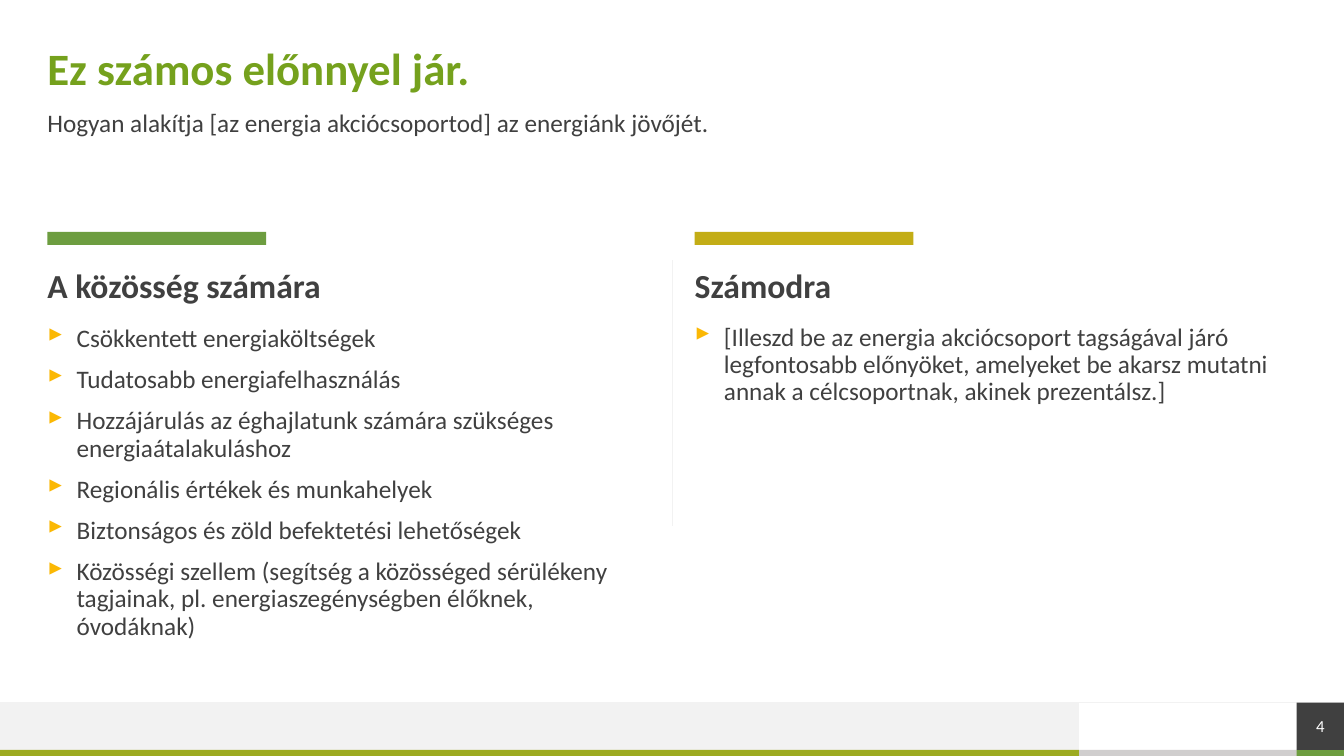
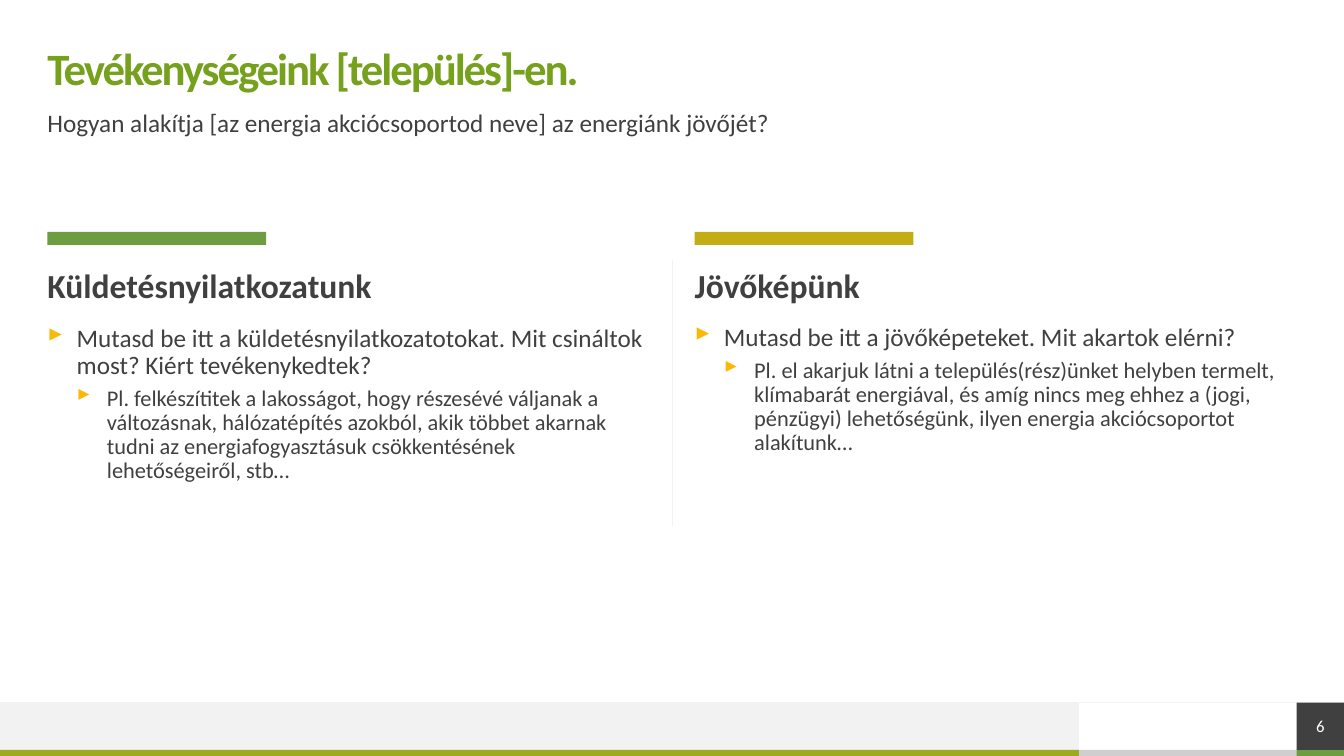
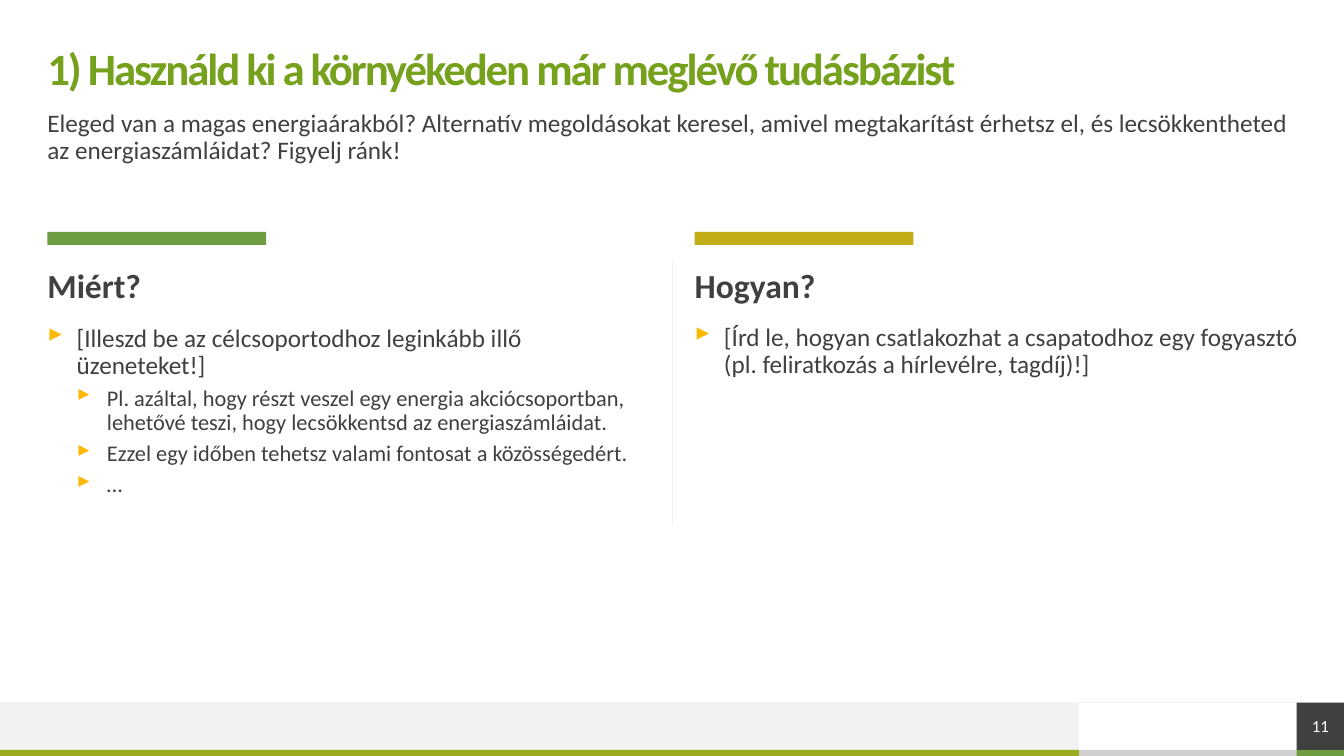
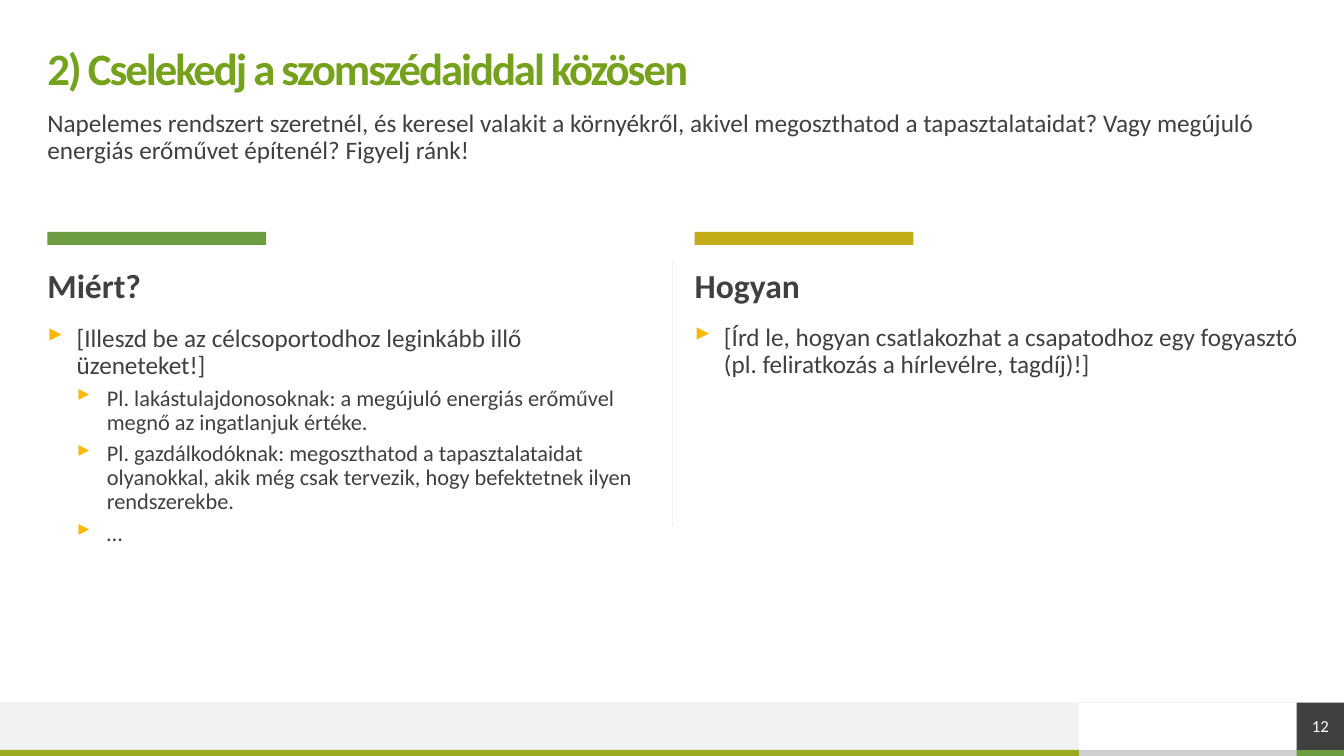
from dataclasses import dataclass

from lxml.etree import SubElement
from pptx import Presentation
from pptx.dml.color import RGBColor as Rgb
from pptx.enum.shapes import MSO_CONNECTOR as Connector, MSO_SHAPE as Shape
from pptx.enum.text import MSO_ANCHOR as Anchor, PP_ALIGN as Align
from pptx.oxml.ns import qn
from pptx.util import Inches, Pt


@dataclass(frozen=True)
class Theme:
    # Colours
    title: str = "75A11D"
    ink: str = "404040"
    white: str = "FFFFFF"
    pale: str = "F2F2F2"
    grey: str = "D0CECE"
    lime: str = "9CAA20"
    green: str = "6D9D40"
    gold: str = "C3AD16"
    bullet: str = "FBB804"
    # Type
    font: str = "Calibri"
    title_size: int = 32
    heading_size: int = 24
    body_size: int = 18
    detail_size: int = 16
    number_size: int = 12
    line_spacing: float = 0.9


# Page geometry in inches
WIDTH, HEIGHT = 13.33, 7.5
MARGIN, CONTENT_WIDTH = 0.47, 12.4
COLUMN_WIDTH, ACCENT_WIDTH = 5.98, 2.17
FOOTER_TOP, STRIP_TOP, STRIP_HEIGHT = 6.97, 7.44, 0.06
FOOTER_HEIGHT = STRIP_TOP - FOOTER_TOP
FOOTER_SPLIT, NUMBER_LEFT = 10.7, 12.86


class Slides:
    """Holds the deck, its style and the slide being built."""

    def __init__(self, theme):
        self.theme = theme
        self.deck = Presentation()
        self.deck.slide_width, self.deck.slide_height = Inches(WIDTH), Inches(HEIGHT)
        self.page = None

    # Basic elements
    def bar(self, left, top, width, height, color):
        box = self.page.shapes.add_shape(
            Shape.RECTANGLE, Inches(left), Inches(top), Inches(width), Inches(height))
        box.shadow.inherit = False
        box.fill.solid()
        box.fill.fore_color.rgb = Rgb.from_string(color)
        box.line.fill.background()
        return box

    def line(self, x1, y1, x2, y2):
        rule = self.page.shapes.add_connector(
            Connector.STRAIGHT, Inches(x1), Inches(y1), Inches(x2), Inches(y2))
        rule.line.color.rgb = Rgb.from_string(self.theme.pale)
        rule.line.width = Pt(0.5)
        SubElement(rule._element.spPr, qn("a:effectLst"))

    def frame(self, box, anchor=Anchor.TOP):
        frame = box.text_frame
        frame.word_wrap = True
        frame.vertical_anchor = anchor
        frame.margin_left = frame.margin_top = frame.margin_right = frame.margin_bottom = 0
        return frame

    def textbox(self, left, top, width, height, anchor=Anchor.TOP):
        return self.frame(self.page.shapes.add_textbox(
            Inches(left), Inches(top), Inches(width), Inches(height)), anchor)

    def add_text(self, para, text, size, color, bold=False):
        span = para.add_run()
        span.text = text
        para.font.name = self.theme.font
        para.font.size = Pt(size)
        para.font.bold = bold
        para.font.color.rgb = Rgb.from_string(color)
        return span

    def label(self, left, top, width, height, text, size, color,
              bold=False, anchor=Anchor.TOP):
        para = self.textbox(left, top, width, height, anchor).paragraphs[0]
        para.line_spacing = self.theme.line_spacing
        return self.add_text(para, text, size, color, bold)

    # Bulleted text: each item is (level, text)
    def bullets(self, left, top, height, items):
        frame = self.textbox(left, top, COLUMN_WIDTH, height)
        for index, (level, text) in enumerate(items):
            para = frame.add_paragraph() if index else frame.paragraphs[0]
            para.level = level
            para.line_spacing = self.theme.line_spacing
            if index:
                para.space_before = Pt(5 if level else 10)
            props = para._p.get_or_add_pPr()
            props.set("marL", str(Inches(0.59 if level else 0.29)))
            props.set("indent", str(-Inches(0.3 if level else 0.29)))
            tint = SubElement(props, qn("a:buClr"))
            SubElement(tint, qn("a:srgbClr"), val=self.theme.bullet)
            SubElement(props, qn("a:buChar"), char="▸")
            size = self.theme.detail_size if level else self.theme.body_size
            self.add_text(para, text, size, self.theme.ink)

    # Shared parts of every slide
    def footer(self, number):
        t = self.theme
        self.bar(FOOTER_SPLIT, STRIP_TOP, ACCENT_WIDTH, STRIP_HEIGHT, t.grey)
        self.bar(0, FOOTER_TOP, FOOTER_SPLIT, FOOTER_HEIGHT, t.pale)
        self.bar(0, STRIP_TOP, FOOTER_SPLIT, STRIP_HEIGHT, t.lime)
        self.bar(NUMBER_LEFT, STRIP_TOP, WIDTH - NUMBER_LEFT, STRIP_HEIGHT, t.green)
        self.line(WIDTH, FOOTER_TOP, 0, FOOTER_TOP)
        box = self.bar(NUMBER_LEFT, FOOTER_TOP, WIDTH - NUMBER_LEFT, FOOTER_HEIGHT, t.ink)
        para = self.frame(box, Anchor.MIDDLE).paragraphs[0]
        para.alignment = Align.CENTER
        self.add_text(para, number, t.number_size, t.white)

    def header(self, title, subtitle, spacing):
        t = self.theme
        span = self.label(MARGIN, 0.47, CONTENT_WIDTH, 0.47, title,
                          t.title_size, t.title, True, Anchor.MIDDLE)
        if spacing:
            span._r.get_or_add_rPr().set("spc", str(int(spacing * 100)))
        self.label(MARGIN, 1.1, CONTENT_WIDTH, 0.39, subtitle, t.body_size, t.ink)

    def column(self, left, list_top, color, heading, items, height=2.4):
        self.bar(left, 2.3, ACCENT_WIDTH, 0.13, color)
        self.label(left, 2.67, COLUMN_WIDTH, 0.39, heading,
                   self.theme.heading_size, self.theme.ink, True)
        self.bullets(left, list_top, height, items)

    def two_columns(self, number, title, subtitle, left, right,
                    spacing=-1.5, left_height=2.4):
        self.page = self.deck.slides.add_slide(self.deck.slide_layouts[6])
        self.footer(number)
        self.header(title, subtitle, spacing)
        self.column(MARGIN, 3.23, self.theme.green, *left, height=left_height)
        self.line(6.67, 2.58, 6.67, 5.22)
        self.column(6.89, 3.22, self.theme.gold, *right)


# Wording used on more than one slide
MESSAGES = (0, "[Illeszd be az célcsoportodhoz leginkább illő üzeneteket!]")
JOINING = [(0, "[Írd le, hogyan csatlakozhat a csapatodhoz egy fogyasztó "
               "(pl. feliratkozás a hírlevélre, tagdíj)!]")]


def main():
    slides = Slides(Theme())

    # Benefits
    slides.two_columns(
        "4", "Ez számos előnnyel jár.",
        "Hogyan alakítja [az energia akciócsoportod] az energiánk jövőjét.",
        ("A közösség számára", [
            (0, "Csökkentett energiaköltségek"),
            (0, "Tudatosabb energiafelhasználás"),
            (0, "Hozzájárulás az éghajlatunk számára szükséges energiaátalakuláshoz"),
            (0, "Regionális értékek és munkahelyek"),
            (0, "Biztonságos és zöld befektetési lehetőségek"),
            (0, "Közösségi szellem (segítség a közösséged sérülékeny tagjainak, "
                "pl. energiaszegénységben élőknek, óvodáknak)"),
        ]),
        ("Számodra", [
            (0, "[Illeszd be az energia akciócsoport tagságával járó legfontosabb előnyöket, "
                "amelyeket be akarsz mutatni annak a célcsoportnak, akinek prezentálsz.]"),
        ]),
        spacing=0, left_height=3.18)

    # Activities
    slides.two_columns(
        "6", "Tevékenységeink [település]-en.",
        "Hogyan alakítja [az energia akciócsoportod neve] az energiánk jövőjét?",
        ("Küldetésnyilatkozatunk", [
            (0, "Mutasd be itt a küldetésnyilatkozatotokat. Mit csináltok most? "
                "Kiért tevékenykedtek?"),
            (1, "Pl. felkészítitek a lakosságot, hogy részesévé váljanak a változásnak, "
                "hálózatépítés azokból, akik többet akarnak tudni az energiafogyasztásuk "
                "csökkentésének lehetőségeiről, stb…"),
        ]),
        ("Jövőképünk", [
            (0, "Mutasd be itt a jövőképeteket. Mit akartok elérni?"),
            (1, "Pl. el akarjuk látni a település(rész)ünket helyben termelt, klímabarát "
                "energiával, és amíg nincs meg ehhez a (jogi, pénzügyi) lehetőségünk, "
                "ilyen energia akciócsoportot alakítunk…"),
        ]))

    # Local knowledge
    slides.two_columns(
        "11", "1) Használd ki a környékeden már meglévő tudásbázist",
        "Eleged van a magas energiaárakból? Alternatív megoldásokat keresel, amivel "
        "megtakarítást érhetsz el, és lecsökkentheted az energiaszámláidat? Figyelj ránk!",
        ("Miért?", [
            MESSAGES,
            (1, "Pl. azáltal, hogy részt veszel egy energia akciócsoportban, lehetővé teszi, "
                "hogy lecsökkentsd az energiaszámláidat."),
            (1, "Ezzel egy időben tehetsz valami fontosat a közösségedért."),
            (1, "…"),
        ]),
        ("Hogyan?", JOINING))

    # Acting with neighbours
    slides.two_columns(
        "12", "2) Cselekedj a szomszédaiddal közösen",
        "Napelemes rendszert szeretnél, és keresel valakit a környékről, akivel megoszthatod "
        "a tapasztalataidat? Vagy megújuló energiás erőművet építenél? Figyelj ránk!",
        ("Miért?", [
            MESSAGES,
            (1, "Pl. lakástulajdonosoknak: a megújuló energiás erőművel megnő az "
                "ingatlanjuk értéke."),
            (1, "Pl. gazdálkodóknak: megoszthatod a tapasztalataidat olyanokkal, akik még "
                "csak tervezik, hogy befektetnek ilyen rendszerekbe."),
            (1, "…"),
        ]),
        ("Hogyan", JOINING))

    slides.deck.save("out.pptx")


if __name__ == "__main__":
    main()
